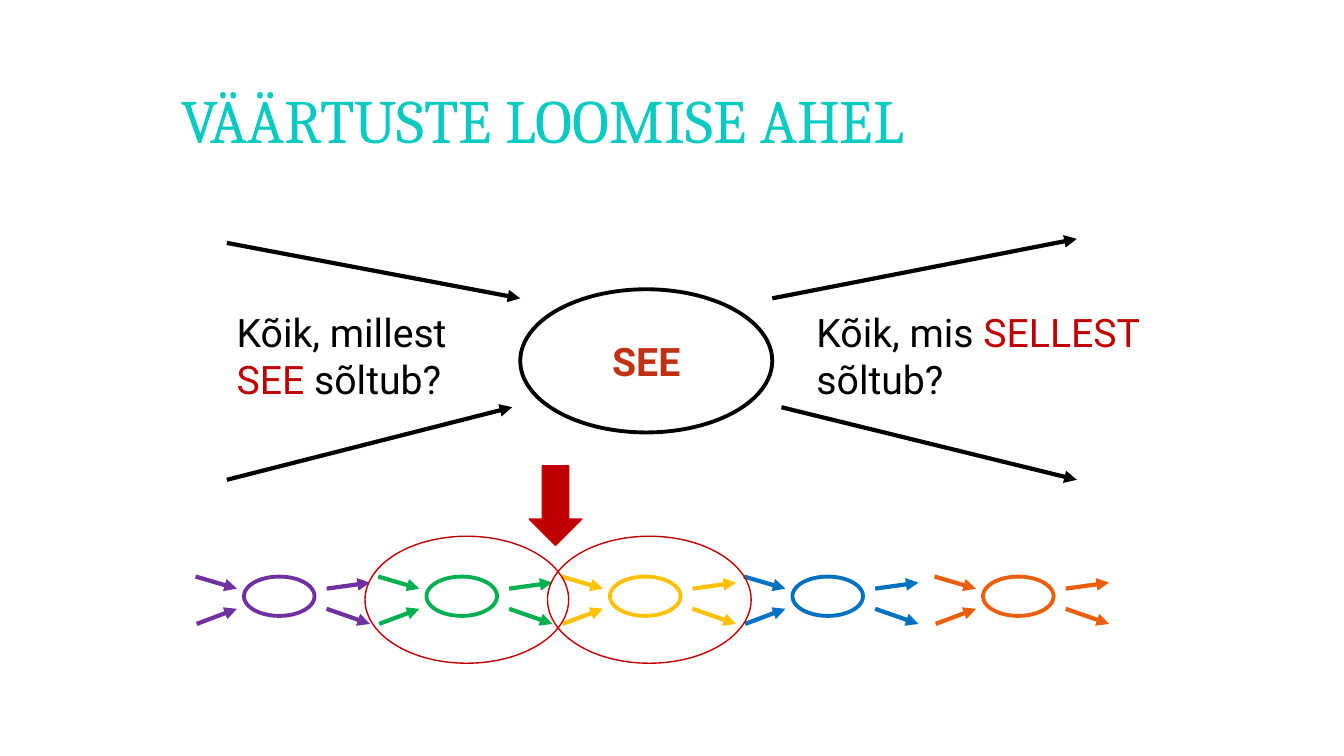
"""Build the value creation chain slide."""
from dataclasses import dataclass

from lxml import etree
from pptx import Presentation
from pptx.dml.color import RGBColor
from pptx.enum.shapes import MSO_CONNECTOR, MSO_SHAPE
from pptx.enum.text import MSO_ANCHOR, PP_ALIGN
from pptx.oxml.ns import qn
from pptx.util import Pt

STRAIGHT = MSO_CONNECTOR.STRAIGHT
OVAL, DOWN_ARROW = MSO_SHAPE.OVAL, MSO_SHAPE.DOWN_ARROW
TOP, MIDDLE, BOTTOM = MSO_ANCHOR.TOP, MSO_ANCHOR.MIDDLE, MSO_ANCHOR.BOTTOM
LEFT, CENTER = PP_ALIGN.LEFT, PP_ALIGN.CENTER
EMU_PER_PX = 9144


@dataclass(frozen=True)
class Theme:
    """Hold the colours, fonts and sizes of the slide."""
    title: str = "08CAC1"
    ink: str = "000000"
    paper: str = "FFFFFF"
    accent: str = "C00000"
    core: str = "C03114"
    title_font: str = "Cambria"
    body_font: str = "Roboto"
    title_size: int = 44
    body_size: int = 28
    arrow_width: float = 3
    oval_width: float = 2.75
    thin_width: float = 1


THEME = Theme()
SLIDE_SIZE = (1333, 750)
TITLE = ("VÄÄRTUSTE LOOMISE AHEL", (170, 52, 921, 108))
QUESTIONS = [
    ((225, 301, 290, 104), [("Kõik, millest ", THEME.ink), ("SEE", THEME.accent), (" sõltub?", THEME.ink)]),
    ((800, 301, 347, 104), [("Kõik, mis ", THEME.ink), ("SELLEST", THEME.accent), (" sõltub?", THEME.ink)]),
]
CORE = ("SEE", (516, 287, 250, 142))
CORE_ARROWS = [(225, 241, 516, 296), (225, 476, 508, 404), (766, 296, 1068, 237), (775, 404, 1068, 476)]
CHAIN_TOP = 572
LINKS = [(375, "00B050"), (194, "7030A0"), (557, "FFC000"), (738, "0070C0"), (927, "E95F0E")]
LINK_ARROWS = [(0, 0, 41, 12), (1, 47, 41, 32), (130, 12, 173, 6), (130, 32, 173, 47)]
LINK_OVAL = (48, 0, 70, 39)
RINGS = [(362, 532, 202, 126), (543, 532, 202, 126)]
DOWN_BOX = (525, 462, 52, 79)


def emu(lengths):
    """Turn px lengths into EMU."""
    return [length * EMU_PER_PX for length in lengths]


def shifted(lengths, left, top):
    """Move the first two of the lengths by an offset."""
    return (lengths[0] + left, lengths[1] + top) + lengths[2:]


def add_runs(paragraph, runs, font, size, bold=False):
    """Add coloured runs to a paragraph."""
    for text, color in runs:
        run = paragraph.add_run()
        run.text = text
        run.font.name, run.font.size, run.font.bold = font, Pt(size), bold
        run.font.color.rgb = RGBColor.from_string(color)


def add_text(slide, box, runs, font, size, anchor=TOP):
    """Add a wrapping text box and return its paragraph."""
    frame = slide.shapes.add_textbox(*emu(box)).text_frame
    frame.word_wrap = True
    frame.vertical_anchor = anchor
    paragraph = frame.paragraphs[0]
    paragraph.alignment = LEFT
    add_runs(paragraph, runs, font, size)
    return paragraph


def add_figure(slide, kind, box, line, width, fill=None):
    """Add an outlined preset shape."""
    shape = slide.shapes.add_shape(kind, *emu(box))
    shape.shadow.inherit = False
    if fill:
        shape.fill.solid()
        shape.fill.fore_color.rgb = RGBColor.from_string(fill)
    else:
        shape.fill.background()
    shape.line.color.rgb = RGBColor.from_string(line)
    shape.line.width = Pt(width)
    return shape


def add_arrow(slide, ends, color):
    """Add a straight arrow without a shadow."""
    connector = slide.shapes.add_connector(STRAIGHT, *emu(ends))
    connector.line.color.rgb = RGBColor.from_string(color)
    connector.line.width = Pt(THEME.arrow_width)
    properties = connector.element.spPr
    outline = properties.find(qn("a:ln"))
    etree.SubElement(outline, qn("a:tailEnd"), type="triangle")
    etree.SubElement(properties, qn("a:effectLst"))


def add_core(slide):
    """Add the central oval, its arrows and the two questions."""
    for box, runs in QUESTIONS:
        add_text(slide, box, runs, THEME.body_font, THEME.body_size)
    for ends in CORE_ARROWS:
        add_arrow(slide, ends, THEME.ink)
    label, box = CORE
    frame = add_figure(slide, OVAL, box, THEME.ink, THEME.oval_width, THEME.paper).text_frame
    frame.word_wrap = False
    frame.vertical_anchor = MIDDLE
    frame.paragraphs[0].alignment = CENTER
    add_runs(frame.paragraphs[0], [(label, THEME.core)], THEME.body_font, THEME.body_size, True)


def add_chain(slide):
    """Add the coloured links, the rings and the down arrow."""
    for left, color in LINKS:
        for x1, y1, x2, y2 in LINK_ARROWS:
            start = shifted((x1, y1), left, CHAIN_TOP)
            end = shifted((x2, y2), left, CHAIN_TOP)
            add_arrow(slide, start + end, color)
        oval = shifted(LINK_OVAL, left, CHAIN_TOP)
        add_figure(slide, OVAL, oval, color, THEME.oval_width, THEME.paper)
    for box in RINGS:
        add_figure(slide, OVAL, box, THEME.accent, THEME.thin_width)
    add_figure(slide, DOWN_ARROW, DOWN_BOX, THEME.accent, THEME.thin_width, THEME.accent)


def main():
    """Build and save the presentation."""
    presentation = Presentation()
    presentation.slide_width, presentation.slide_height = emu(SLIDE_SIZE)
    slide = presentation.slides.add_slide(presentation.slide_layouts[6])
    add_core(slide)
    add_chain(slide)
    text, box = TITLE
    title = add_text(slide, box, [(text, THEME.title)], THEME.title_font, THEME.title_size, BOTTOM)
    title.line_spacing = 0.9
    presentation.save("out.pptx")


if __name__ == "__main__":
    main()
